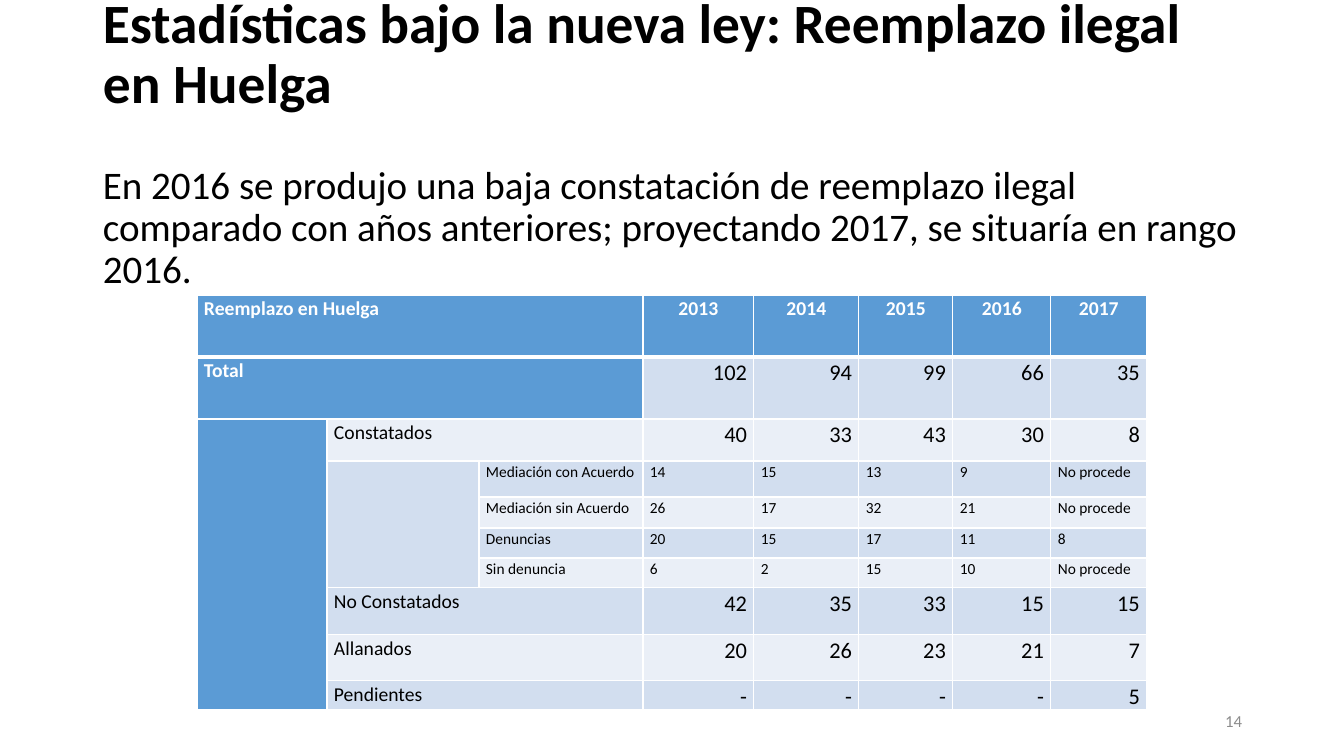
from lxml import etree
from pptx import Presentation, util as u
from pptx.dml.color import RGBColor
from pptx.enum import text as t
from pptx.oxml.ns import qn

PX = 9071
FONT = "Calibri"
BLUE, MID, PALE = "5B9BD5", "D2DEEF", "EAEFF7"
WHITE, BLACK, GRAY = "FFFFFF", "000000", "8C8C8C"
LEFT, MIDDLE, RIGHT = t.PP_ALIGN.LEFT, t.PP_ALIGN.CENTER, t.PP_ALIGN.RIGHT

TITLE = "Estadísticas bajo la nueva ley: Reemplazo ilegal en Huelga"
CLAIM = ("En 2016 se produjo una baja constatación de reemplazo ilegal comparado "
         "con años anteriores; proyectando 2017, se situaría en rango 2016.")
COLS = [130, 152, 164, 111, 105, 94, 98, 96]
ROWS = [
    (62, 0, "Reemplazo en Huelga", "2013 2014 2015 2016 2017".split()),
    (62, 0, "Total", "102 94 99 66 35".split()),
    (42, 1, "Constatados", "40 33 43 30 8".split()),
    (36, 2, "Mediación con Acuerdo", ["14", "15", "13", "9", "No procede"]),
    (31, 2, "Mediación sin Acuerdo", ["26", "17", "32", "21", "No procede"]),
    (30, 2, "Denuncias", "20 15 17 11 8".split()),
    (30, 2, "Sin denuncia", ["6", "2", "15", "10", "No procede"]),
    (47, 1, "No Constatados", "42 35 33 15 15".split()),
    (46, 1, "Allanados", "20 26 23 21 7".split()),
    (29, 1, "Pendientes", "- - - - 5".split()),
]


def px(n):
    """Turn px into EMU."""
    return u.Emu(n * PX)


def rgb(code):
    """Turn a hex string into a colour."""
    return RGBColor.from_string(code)


def style(para, size, color, bold=False, align=LEFT, space=1.0):
    """Format a paragraph and its runs."""
    para.alignment, para.line_spacing = align, space
    for run in para.runs:
        font = run.font
        font.name, font.size, font.bold = FONT, u.Pt(size), bold
        font.color.rgb = rgb(color)


def frame(slide, box):
    """Add a wrapped, vertically centred text box."""
    body = slide.shapes.add_textbox(*map(px, box)).text_frame
    body.word_wrap = True
    body.vertical_anchor = t.MSO_ANCHOR.MIDDLE
    return body


def heading(slide, box):
    """Place the title and the claim under it."""
    body = frame(slide, box)
    body.margin_top, body.margin_bottom = px(67), px(5)
    body.text = TITLE + "\n" + CLAIM
    title, claim = body.paragraphs
    style(title, 39.6, BLACK, True, space=0.9)
    style(claim, 27.9, BLACK, space=0.9)
    claim.space_before = u.Pt(36)


def number(slide, box):
    """Place the page number."""
    body = frame(slide, box)
    body.text = "14"
    style(body.paragraphs[0], 12, GRAY, align=RIGHT)


def border(cell, base):
    """Draw white cell borders, with the given bottom width."""
    props = cell._tc.get_or_add_tcPr()
    for i, side in enumerate(("lnL", "lnR", "lnT", "lnB")):
        wide = base if side == "lnB" else 1
        line = etree.Element(qn("a:" + side), w=str(u.Pt(wide)))
        fill = etree.SubElement(line, qn("a:solidFill"))
        etree.SubElement(fill, qn("a:srgbClr"), val=WHITE)
        props.insert(i, line)


def write(cell, words, size, color, bold, align):
    """Put text into a table cell."""
    cell.text = words
    style(cell.text_frame.paragraphs[0], size, color, bold, align, 1.07)


def strikes(slide, box):
    """Place the table of replacements during strikes."""
    grid = slide.shapes.add_table(len(ROWS), len(COLS), *map(px, box)).table
    for col, wide in zip(grid.columns, COLS):
        col.width = px(wide)
    for r, (high, level, label, values) in enumerate(ROWS):
        grid.rows[r].height = px(high)
        for c, cell in enumerate(grid.rows[r].cells):
            cell.margin_left = cell.margin_right = px(7)
            cell.margin_top = cell.margin_bottom = 0
            head = r == 0 or c == 0 or (r == 1 and c < 3)
            cell.fill.solid()
            cell.fill.fore_color.rgb = rgb(BLUE if head else MID if r % 2 else PALE)
            border(cell, 1 if r else 3)
        if level < 2:
            grid.cell(r, level).merge(grid.cell(r, 2))
        bold = level == 0
        write(grid.cell(r, level), label, 11 if level == 2 else 14,
              WHITE if bold else BLACK, bold, LEFT)
        size, align = (14, MIDDLE) if r == 0 else (11, LEFT) if level == 2 else (16, RIGHT)
        for c, value in enumerate(values, 3):
            write(grid.cell(r, c), value, size, BLACK if r else WHITE, r == 0, align)
    grid.cell(2, 0).merge(grid.cell(9, 0))
    grid.cell(3, 1).merge(grid.cell(6, 1))


def main():
    """Build and save the slide."""
    deck = Presentation()
    deck.slide_width, deck.slide_height = px(1344), px(756)
    slide = deck.slides.add_slide(deck.slide_layouts[6])
    heading(slide, (93, 40, 1159, 146))
    number(slide, (950, 701, 302, 40))
    strikes(slide, (197, 295, sum(COLS), sum(row[0] for row in ROWS)))
    deck.save("out.pptx")


if __name__ == "__main__":
    main()
